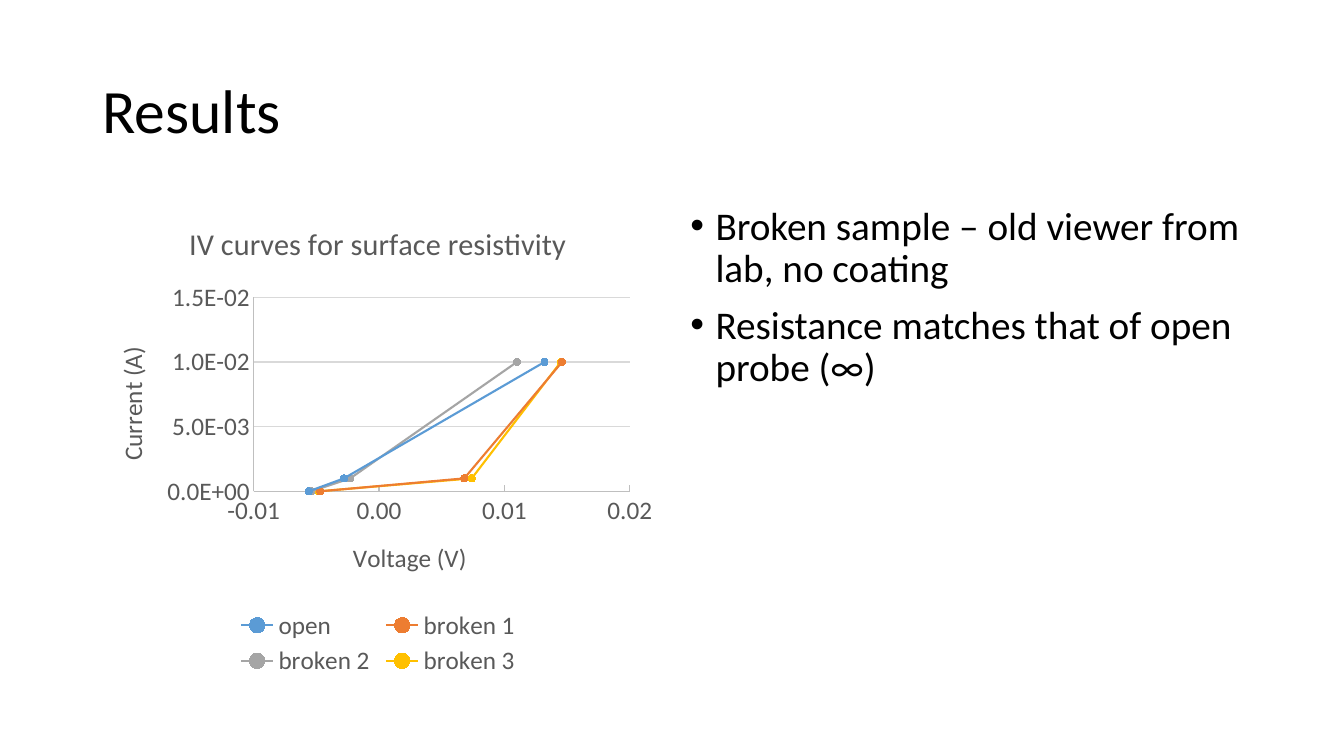
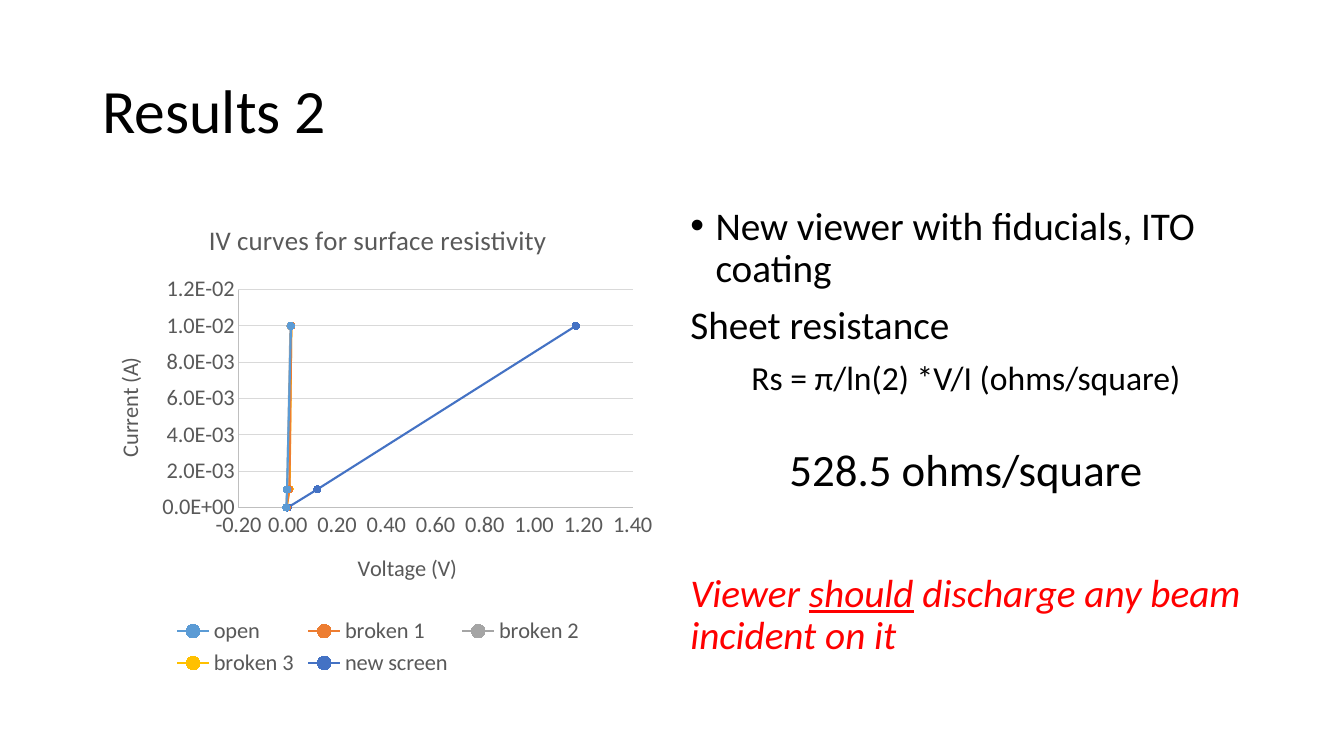
from dataclasses import dataclass

from lxml.etree import SubElement
from pptx import Presentation
from pptx.chart.data import XyChartData
from pptx.dml.color import RGBColor
from pptx.enum.chart import (XL_AXIS_CROSSES, XL_CHART_TYPE, XL_LEGEND_POSITION,
                             XL_MARKER_STYLE, XL_TICK_LABEL_POSITION, XL_TICK_MARK)
from pptx.enum.text import MSO_ANCHOR, MSO_AUTO_SIZE, PP_ALIGN
from pptx.oxml.ns import qn
from pptx.util import Inches, Pt


@dataclass(frozen=True)
class Theme:
    """Colours, type sizes and grid of the deck."""
    font: str = "Calibri"
    ink: str = "000000"
    alert: str = "FF0000"
    label: str = "595959"
    axis: str = "BFBFBF"
    grid: str = "D9D9D9"
    hues: tuple = ("5B9BD5", "ED7D31", "A5A5A5", "FFC000", "4472C4")
    head: int = 44
    large: int = 32
    body: int = 28
    small: int = 24
    lead: float = 0.9
    gap: int = 10
    cols: int = 160
    rows: int = 90


THEME = Theme()
TITLE = (11, 4.8, 138, 17.4)
LEFT = (11, 24, 68, 57.1)
RIGHT = (81, 24, 68, 57.1)
CURRENT = (0.01, 0.001, 0)
OLD = {
    "open": (0.0132, -0.0028, -0.0056),
    "broken 1": (0.0146, 0.0068, -0.0047),
    "broken 2": (0.011, -0.0023, -0.0054),
    "broken 3": (0.0145, 0.0074, -0.0048),
}
NEW = OLD | {"new screen": (1.17, 0.12, 0)}


def style(font, size, color, bold=False, italic=False, under=False):
    """Set the look of a font."""
    font.name, font.size = THEME.font, Pt(size)
    font.bold, font.italic, font.underline = bold, italic, under
    font.color.rgb = RGBColor.from_string(color)


def write(para, text, size=THEME.body, color=THEME.ink, **look):
    """Add a formatted run to a paragraph."""
    run = para.add_run()
    run.text = text
    style(run.font, size, color, **look)


def stroke(line, color, width=0.75):
    """Set the colour and width of a line."""
    line.color.rgb = RGBColor.from_string(color)
    line.width = Pt(width)


class Deck:
    """Holds the theme, the deck and the current slide."""

    def __init__(self, theme=THEME):
        """Start a wide deck."""
        self.theme = theme
        self.show = Presentation()
        self.show.slide_width, self.show.slide_height = Inches(13.33), Inches(7.5)
        self.slide = None

    def box(self, cells):
        """Turn grid cells into lengths."""
        col = self.show.slide_width / self.theme.cols
        row = self.show.slide_height / self.theme.rows
        return [int(n * unit) for n, unit in zip(cells, (col, row, col, row))]

    def page(self, title):
        """Add a slide with its title."""
        self.slide = self.show.slides.add_slide(self.show.slide_layouts[5])
        head = self.slide.shapes.title
        head.left, head.top, head.width, head.height = self.box(TITLE)
        frame = head.text_frame
        frame.auto_size = MSO_AUTO_SIZE.NONE
        frame.vertical_anchor = MSO_ANCHOR.MIDDLE
        para = frame.paragraphs[0]
        para.alignment, para.line_spacing = PP_ALIGN.LEFT, self.theme.lead
        write(para, title, size=self.theme.head)

    def text(self, cells):
        """Add a wrapping text box and return its frame."""
        frame = self.slide.shapes.add_textbox(*self.box(cells)).text_frame
        frame.word_wrap = True
        return frame

    def para(self, frame, *runs, gap=THEME.gap, align=PP_ALIGN.LEFT, dot=False, **look):
        """Add a paragraph of runs, each a text or a text with its look."""
        first = frame.paragraphs[0]
        para = frame.add_paragraph() if first.runs else first
        para.alignment, para.line_spacing = align, self.theme.lead
        para.space_before = Pt(gap if para is not first else 0)
        if dot:
            props = para._p.get_or_add_pPr()
            props.set("marL", str(Inches(0.25)))
            props.set("indent", str(Inches(-0.25)))
            SubElement(props, qn("a:buFont"), typeface="Arial")
            SubElement(props, qn("a:buChar"), char="•")
        for run in runs:
            words, extra = (run, {}) if isinstance(run, str) else run
            write(para, words, **(look | extra))

    def axis(self, axis, title, form, span, size, tick=XL_TICK_MARK.NONE):
        """Format one axis with its low, high and step."""
        axis.minimum_scale, axis.maximum_scale, axis.major_unit = span
        axis.major_tick_mark, axis.minor_tick_mark = tick, XL_TICK_MARK.NONE
        axis.tick_label_position = XL_TICK_LABEL_POSITION.NEXT_TO_AXIS
        axis.crosses = XL_AXIS_CROSSES.MINIMUM
        axis.tick_labels.number_format = form
        axis.tick_labels.number_format_is_linked = False
        style(axis.tick_labels.font, size, self.theme.label)
        stroke(axis.format.line, self.theme.axis)
        write(axis.axis_title.text_frame.paragraphs[0], title,
              size=size, color=self.theme.label)

    def plot(self, cells, curves, size, across, up, tick=XL_TICK_MARK.NONE):
        """Add a chart of current against voltage."""
        data = XyChartData()
        for name, volts in curves.items():
            line = data.add_series(name)
            for volt, amp in zip(volts, CURRENT):
                line.add_data_point(volt, amp)
        chart = self.slide.shapes.add_chart(
            XL_CHART_TYPE.XY_SCATTER_LINES, *self.box(cells), data).chart
        style(chart.font, size, self.theme.ink)
        chart.has_title = True
        write(chart.chart_title.text_frame.paragraphs[0],
              "IV curves for surface resistivity",
              size=size * 1.2, color=self.theme.label)
        chart.chart_title.include_in_layout = False
        chart.has_legend = True
        chart.legend.position = XL_LEGEND_POSITION.BOTTOM
        chart.legend.include_in_layout = False
        style(chart.legend.font, size, self.theme.label)
        self.axis(chart.category_axis, "Voltage (V)", "#,##0.00", across, size, tick)
        self.axis(chart.value_axis, "Current (A)", "0.0E+00", up, size)
        chart.category_axis.has_major_gridlines = False
        chart.value_axis.has_major_gridlines = True
        stroke(chart.value_axis.major_gridlines.format.line, self.theme.grid)
        chart.plots[0].vary_by_categories = False
        for line, hue in zip(chart.plots[0].series, self.theme.hues):
            line.smooth = False
            stroke(line.format.line, hue, 1.5)
            mark = line.marker
            mark.style, mark.size = XL_MARKER_STYLE.CIRCLE, 5
            mark.format.fill.solid()
            mark.format.fill.fore_color.rgb = RGBColor.from_string(hue)
            stroke(mark.format.line, hue)


def main():
    """Build and save the deck."""
    deck = Deck()

    deck.page("Results")
    frame = deck.text(RIGHT)
    deck.para(frame, "Broken sample – old viewer from lab, no coating", dot=True)
    deck.para(frame, "Resistance matches that of open probe (∞)", dot=True)
    deck.plot(LEFT, OLD, 18, (-0.01, 0.02, 0.01), (0, 0.015, 0.005),
              tick=XL_TICK_MARK.INSIDE)

    deck.page("Results 2")
    frame = deck.text(RIGHT)
    deck.para(frame, "New viewer with fiducials, ITO coating", dot=True)
    deck.para(frame, "Sheet resistance")
    deck.para(frame, "Rs = π/ln(2) *V/I (ohms/square)",
              align=PP_ALIGN.CENTER, size=THEME.small)
    deck.para(frame, "528.5 ohms/square", gap=36,
              align=PP_ALIGN.CENTER, size=THEME.large)
    deck.para(frame, "Viewer ", ("should", {"under": True}),
              " discharge any beam incident on it",
              gap=55, color=THEME.alert, italic=True)
    deck.plot(LEFT, NEW, 16, (-0.2, 1.4, 0.2), (0, 0.012, 0.002))

    deck.show.save("out.pptx")


if __name__ == "__main__":
    main()
